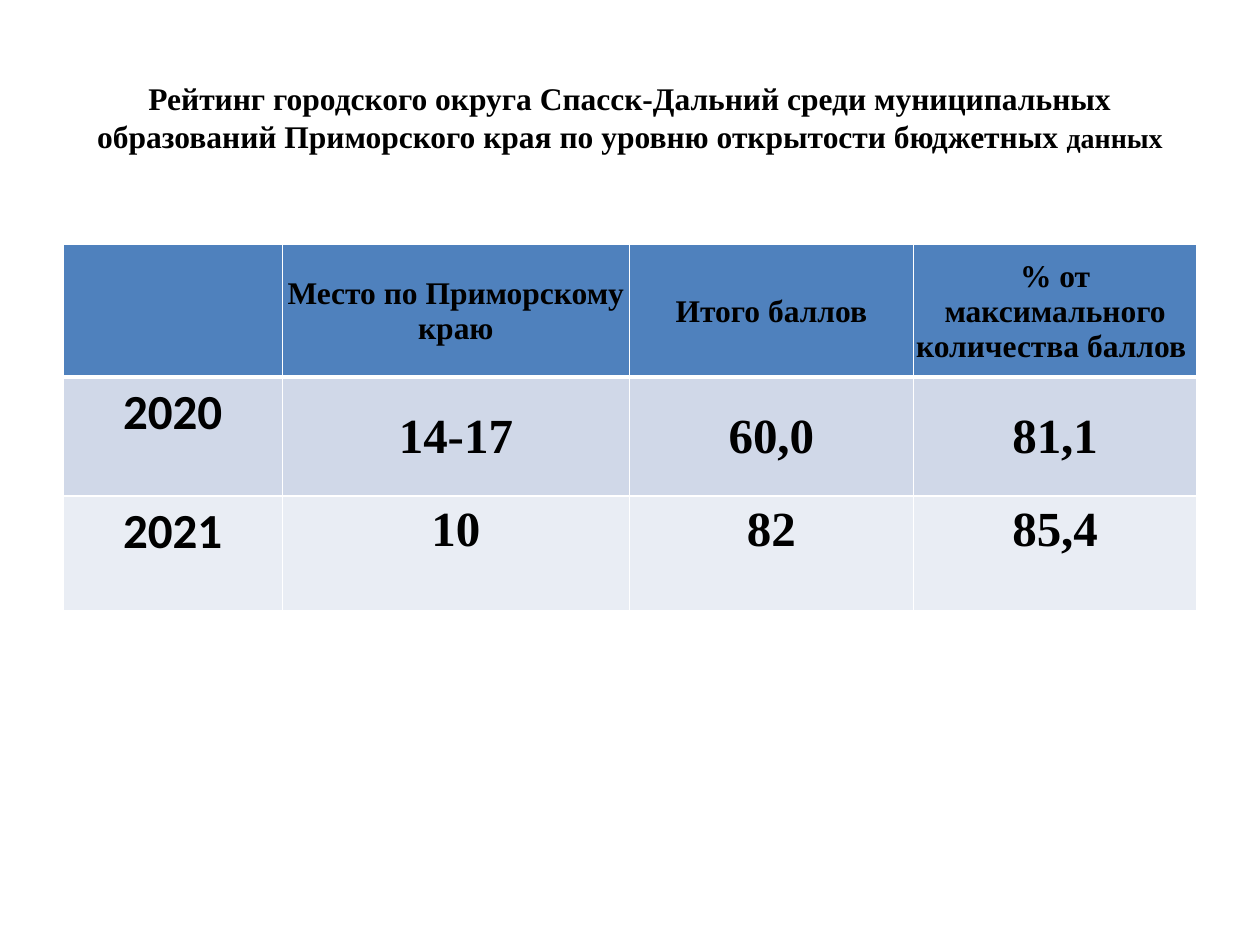
from dataclasses import dataclass

from lxml import etree
from pptx import Presentation
from pptx.dml.color import RGBColor
from pptx.enum.text import MSO_ANCHOR, PP_ALIGN
from pptx.oxml.ns import qn
from pptx.util import Cm, Pt

CENTER = PP_ALIGN.CENTER
MIDDLE = MSO_ANCHOR.MIDDLE
TOP = MSO_ANCHOR.TOP


@dataclass(frozen=True)
class Theme:
    ink: str = "000000"
    line: str = "FFFFFF"
    header: str = "4F81BD"
    bands: tuple = ("D0D8E8", "E9EDF4")
    serif: str = "Times New Roman"
    sans: str = "Calibri"
    title_size: int = 18
    title_end_size: int = 16
    header_size: int = 18
    value_size: int = 28
    thin: int = 1
    thick: int = 3


def add_text(para, text, *, font, size, color, bold=True):
    para.alignment = CENTER
    span = para.add_run()
    span.text = text
    span.font.name = font
    span.font.size = Pt(size)
    span.font.bold = bold
    span.font.color.rgb = RGBColor.from_string(color)


class SlideBuilder:
    def __init__(self, page, theme):
        self.page = page
        self.theme = theme

    def title(self, spans, left, top, width, height):
        box = self.page.shapes.add_textbox(Cm(left), Cm(top), Cm(width), Cm(height))
        frame = box.text_frame
        frame.word_wrap = True
        frame.vertical_anchor = MIDDLE
        for text, size in spans:
            add_text(frame.paragraphs[0], text, font=self.theme.serif,
                     size=size, color=self.theme.ink)

    def borders(self, cell, bottom):
        properties = cell._tc.get_or_add_tcPr()
        thin = self.theme.thin
        sides = {"a:lnL": thin, "a:lnR": thin, "a:lnT": thin, "a:lnB": bottom}
        for index, (tag, width) in enumerate(sides.items()):
            line = etree.Element(qn(tag), w=str(Pt(width)))
            fill = etree.SubElement(line, qn("a:solidFill"))
            etree.SubElement(fill, qn("a:srgbClr"), val=self.theme.line)
            properties.insert(index, line)

    def cell(self, cell, text, *, fill, font, size, compact, bottom):
        cell.fill.solid()
        cell.fill.fore_color.rgb = RGBColor.from_string(fill)
        self.borders(cell, bottom)
        cell.vertical_anchor = MIDDLE if compact else TOP
        if compact:
            cell.margin_left = cell.margin_right = cell.margin_top = Cm(0.03)
            cell.margin_bottom = Cm(0)
        if text:
            add_text(cell.text_frame.paragraphs[0], text, font=font,
                     size=size, color=self.theme.ink)

    def table(self, rows, left, top, widths, heights):
        theme = self.theme
        frame = self.page.shapes.add_table(
            len(rows), len(widths), Cm(left), Cm(top), Cm(sum(widths)), Cm(sum(heights)))
        table = frame.table
        for column, width in zip(table.columns, widths):
            column.width = Cm(width)
        for row, height in zip(table.rows, heights):
            row.height = Cm(height)
        last = len(rows) - 1
        for r, values in enumerate(rows):
            for c, text in enumerate(values):
                self.cell(
                    table.cell(r, c), text,
                    fill=theme.bands[r - 1] if r else theme.header,
                    font=theme.serif if c else theme.sans,
                    size=theme.value_size if r else theme.header_size,
                    compact=c > 0 and r < last,
                    bottom=theme.thin if r else theme.thick)


def main():
    deck = Presentation()
    deck.slide_width, deck.slide_height = Cm(25.4), Cm(19.05)
    theme = Theme()
    builder = SlideBuilder(deck.slides.add_slide(deck.slide_layouts[6]), theme)

    builder.title(
        [("Рейтинг городского округа Спасск-Дальний среди муниципальных "
          "образований Приморского края по уровню открытости бюджетных ", theme.title_size),
         ("данных", theme.title_end_size)],
        1.27, 0.76, 22.86, 3.18)

    builder.table(
        [("", "Место по Приморскому краю", "Итого баллов",
          "% от максимального количества баллов "),
         ("2020", "14-17", "60,0", "81,1"),
         ("2021", "10", "82", "85,4")],
        1.27, 4.93, (4.42, 7, 5.72, 5.72), (2.67, 2.4, 2.32))

    deck.save("out.pptx")


if __name__ == "__main__":
    main()
